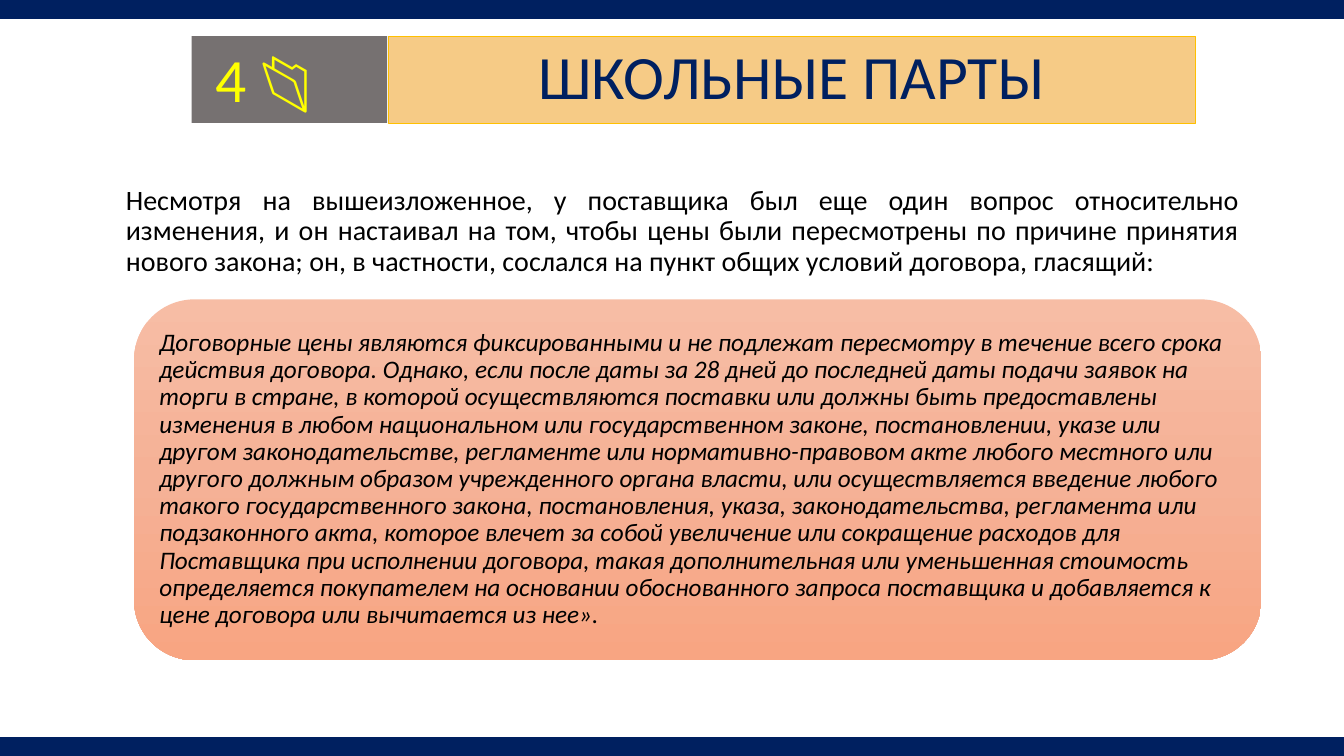
from copy import deepcopy
from dataclasses import dataclass

from pptx import Presentation
from pptx.dml.color import RGBColor
from pptx.enum.shapes import MSO_SHAPE
from pptx.enum.text import MSO_ANCHOR, MSO_AUTO_SIZE, PP_ALIGN
from pptx.oxml.ns import qn
from pptx.util import Inches, Pt

NAVY = "002060"
BLACK = "000000"
PANEL_STOPS = ((0, "F7BDA5"), (0.5, "F5B196"), (1, "F8A582"))

INTRO = (
    "Несмотря на вышеизложенное, у поставщика был еще один вопрос относительно "
    "изменения, и он настаивал на том, чтобы цены были пересмотрены по причине принятия "
    "нового закона; он, в частности, сослался на пункт общих условий договора, гласящий:"
)
CLAUSE = " ".join((
    "Договорные цены являются фиксированными и не подлежат пересмотру в течение всего срока",
    "действия договора. Однако, если после даты за 28 дней до последней даты подачи заявок на",
    "торги в стране, в которой осуществляются поставки или должны быть предоставлены",
    "изменения в любом национальном или государственном законе, постановлении, указе или",
    "другом законодательстве, регламенте или нормативно-правовом акте любого местного или",
    "другого должным образом учрежденного органа власти, или осуществляется введение любого",
    "такого государственного закона, постановления, указа, законодательства, регламента или",
    "подзаконного акта, которое влечет за собой увеличение или сокращение расходов для",
    "Поставщика при исполнении договора, такая дополнительная или уменьшенная стоимость",
    "определяется покупателем на основании обоснованного запроса поставщика и добавляется к",
    "цене договора или вычитается из нее».",
))


@dataclass(frozen=True)
class Box:
    left: float
    top: float
    width: float
    height: float

    def emu(self) -> tuple:
        return tuple(Inches(v) for v in (self.left, self.top, self.width, self.height))


@dataclass(frozen=True)
class TextStyle:
    size: float
    color: str
    align: PP_ALIGN = PP_ALIGN.LEFT
    spacing: float = 0.9
    italic: bool = False
    anchor: MSO_ANCHOR = MSO_ANCHOR.TOP


def rgb(value: str) -> RGBColor:
    return RGBColor.from_string(value)


def add_block(slide, box: Box, fill: str, kind=MSO_SHAPE.RECTANGLE):
    sp = slide.shapes.add_shape(kind, *box.emu())
    sp.shadow.inherit = False
    sp.fill.solid()
    sp.fill.fore_color.rgb = rgb(fill)
    sp.line.fill.background()
    return sp


def set_line(sp, color: str, width: float) -> None:
    sp.line.color.rgb = rgb(color)
    sp.line.width = Pt(width)


def write(sp, text: str, style: TextStyle) -> None:
    tf = sp.text_frame
    tf.word_wrap = True
    tf.auto_size = MSO_AUTO_SIZE.NONE
    tf.vertical_anchor = style.anchor
    p = tf.paragraphs[0]
    p.alignment = style.align
    p.line_spacing = style.spacing
    r = p.add_run()
    r.text = text
    r.font.name = "Calibri"
    r.font.size = Pt(style.size)
    r.font.italic = style.italic
    r.font.color.rgb = rgb(style.color)


def fill_gradient(sp, stops: tuple) -> None:
    """Fill from top to bottom with any number of (position, colour) stops."""
    sp.fill.gradient()
    sp.fill.gradient_angle = 270
    gs_list = sp._element.spPr.find(qn("a:gradFill")).find(qn("a:gsLst"))
    while len(gs_list) < len(stops):
        gs_list.append(deepcopy(gs_list[-1]))
    for stop, (position, color) in zip(sp.fill.gradient_stops, stops):
        stop.position = position
        stop.color.rgb = rgb(color)


def build() -> None:
    prs = Presentation()
    prs.slide_width, prs.slide_height = Inches(13.33), Inches(7.5)
    slide = prs.slides.add_slide(prs.slide_layouts[5])

    for top in (7.32, 0):
        band = add_block(slide, Box(0, top, 13.33, 0.18), NAVY)
        set_line(band, NAVY, 1)

    title = slide.shapes.title
    title.left, title.top, title.width, title.height = Box(3.85, 0.36, 8.01, 0.86).emu()
    title.fill.solid()
    title.fill.fore_color.rgb = rgb("F6CB86")
    set_line(title, "FFC000", 0.5)
    write(title, "ШКОЛЬНЫЕ ПАРТЫ",
          TextStyle(44, NAVY, PP_ALIGN.CENTER, anchor=MSO_ANCHOR.MIDDLE))

    intro = slide.shapes.add_textbox(*Box(1.15, 1.8, 11.24, 1.01).emu())
    write(intro, INTRO, TextStyle(20, BLACK, PP_ALIGN.JUSTIFY))

    badge = add_block(slide, Box(1.9, 0.36, 1.94, 0.86), "767171")
    badge.text_frame.margin_left = Inches(0.24)
    write(badge, "4 📂", TextStyle(44, "FFFF00", spacing=1))

    panel = add_block(slide, Box(1.33, 2.97, 11.18, 3.58), PANEL_STOPS[0][1],
                      MSO_SHAPE.ROUNDED_RECTANGLE)
    fill_gradient(panel, PANEL_STOPS)

    clause = slide.shapes.add_textbox(*Box(1.51, 3.14, 10.83, 3.23).emu())
    tf = clause.text_frame
    tf.margin_left = tf.margin_top = tf.margin_right = tf.margin_bottom = Inches(0.07)
    write(clause, CLAUSE, TextStyle(18, BLACK, italic=True, anchor=MSO_ANCHOR.MIDDLE))

    prs.save("out.pptx")


if __name__ == "__main__":
    build()
